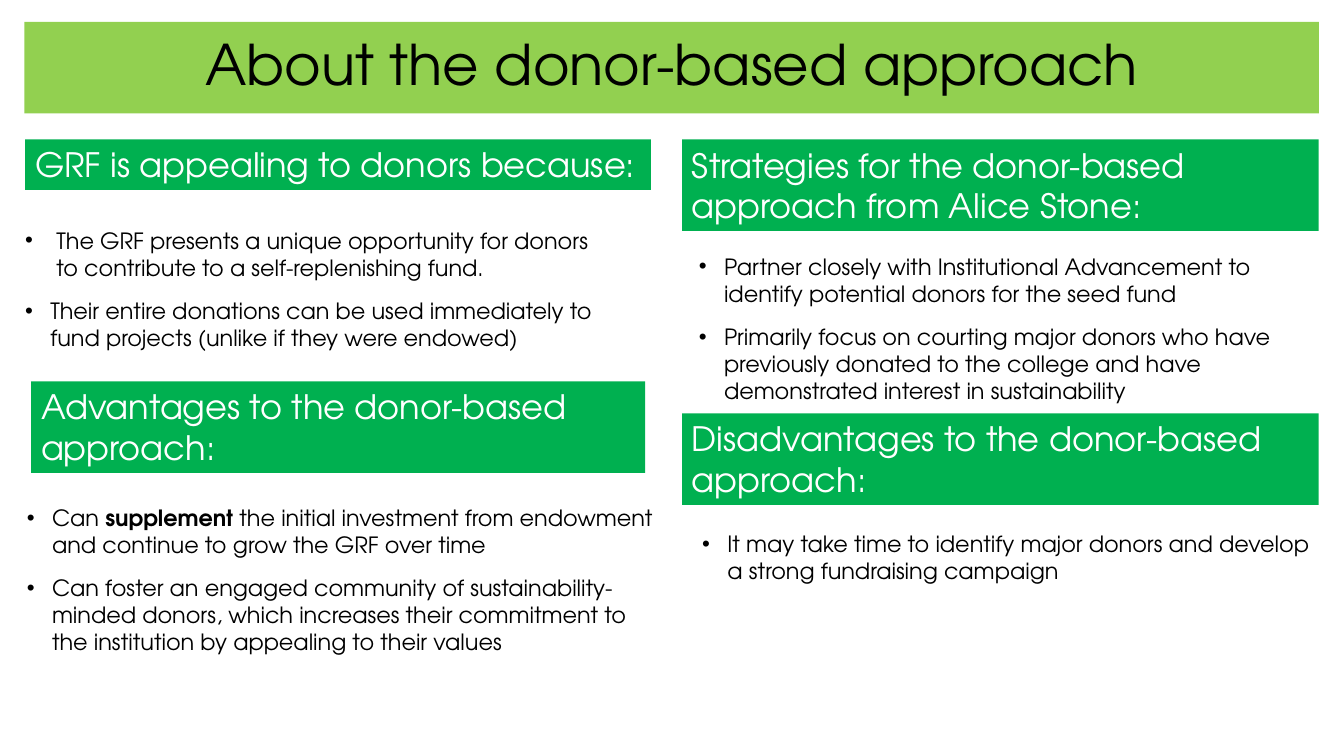
from dataclasses import dataclass

from lxml.etree import SubElement
from pptx import Presentation
from pptx.dml.color import RGBColor
from pptx.enum.shapes import MSO_SHAPE
from pptx.enum.text import MSO_ANCHOR, PP_ALIGN
from pptx.oxml.ns import qn
from pptx.util import Inches, Pt

WIDTH, HEIGHT = Inches(13.33), Inches(7.5)
COLUMNS, ROWS = 160, 90


@dataclass(frozen=True)
class Theme:
    """Colours, font and type sizes of the slide."""
    font: str = "TeX Gyre Adventor"
    title_fill: str = "92D050"
    heading_fill: str = "00B050"
    dark: str = "000000"
    light: str = "FFFFFF"
    title_size: int = 40
    heading_size: int = 24
    body_size: int = 16
    bullet_gap: int = 12


THEME = Theme()
HANG = 0.25
WIDE_HANG = 0.31

HEADINGS = [
    ("GRF is appealing to donors because:", (3, 16.6, 74.5, 6)),
    ("Strategies for the donor-based approach from Alice Stone:", (81.2, 16.6, 75.8, 10.9)),
    ("Advantages to the donor-based approach:", (3.7, 45.4, 73.1, 10.9)),
    ("Disadvantages to the donor-based approach:", (81.2, 49.2, 75.8, 10.9)),
]

POINTS = [
    ((3, 27, 70.1, 16), [
        (WIDE_HANG, ["The GRF presents a unique opportunity for donors to contribute to "
                     "a self-replenishing fund."]),
        (HANG, ["Their entire donations can be used immediately to fund projects "
                "(unlike if they were endowed)"]),
    ]),
    ((83.2, 30.1, 75.6, 19), [
        (HANG, ["Partner closely with Institutional Advancement to identify potential "
                "donors for the seed fund"]),
        (HANG, ["Primarily focus on courting major donors who have previously donated "
                "to the college and have demonstrated interest in sustainability"]),
    ]),
    ((3.2, 60, 75.6, 19), [
        (HANG, ["Can ", "supplement ", "the initial investment from endowment and "
                "continue to grow the GRF over time"]),
        (HANG, ["Can foster an engaged community of sustainability-minded donors, which "
                "increases their commitment to the institution by appealing to their values"]),
    ]),
    ((83.6, 63.1, 73.6, 8), [
        (HANG, ["It may take time to identify major donors and develop a strong "
                "fundraising campaign"]),
    ]),
]


def place(cell):
    """Turn left, top, width and height in grid units into lengths."""
    left, top, width, height = cell
    return (int(WIDTH * left / COLUMNS), int(HEIGHT * top / ROWS),
            int(WIDTH * width / COLUMNS), int(HEIGHT * height / ROWS))


def style(paragraph, size, color):
    """Set the theme font, a size and a colour on a paragraph."""
    paragraph.font.name = THEME.font
    paragraph.font.size = Pt(size)
    paragraph.font.color.rgb = RGBColor.from_string(color)


def add_banner(slide, wording, cell, fill, size, color, align=PP_ALIGN.LEFT, anchor=MSO_ANCHOR.TOP):
    """Add a filled bar with one paragraph and return that paragraph."""
    banner = slide.shapes.add_shape(MSO_SHAPE.RECTANGLE, *place(cell))
    banner.shadow.inherit = False
    banner.fill.solid()
    banner.fill.fore_color.rgb = RGBColor.from_string(fill)
    banner.line.fill.background()
    banner.text_frame.word_wrap = True
    banner.text_frame.vertical_anchor = anchor
    paragraph = banner.text_frame.paragraphs[0]
    paragraph.text = wording
    paragraph.alignment = align
    style(paragraph, size, color)
    return paragraph


def add_bullet(paragraph, hang):
    """Give a paragraph a hanging bullet."""
    properties = paragraph._p.get_or_add_pPr()
    properties.set("marL", str(Inches(hang)))
    properties.set("indent", str(-Inches(hang)))
    SubElement(properties, qn("a:buFont")).set("typeface", "Arial")
    SubElement(properties, qn("a:buChar")).set("char", "•")


def add_points(slide, cell, points):
    """Add a bulleted list in which every second run is bold."""
    frame = slide.shapes.add_textbox(*place(cell)).text_frame
    frame.word_wrap = True
    frame.margin_left = frame.margin_right = frame.margin_top = frame.margin_bottom = 0
    for number, (hang, phrases) in enumerate(points):
        paragraph = frame.add_paragraph() if number else frame.paragraphs[0]
        paragraph.space_before = Pt(THEME.bullet_gap if number else 0)
        add_bullet(paragraph, hang)
        style(paragraph, THEME.body_size, THEME.dark)
        for position, phrase in enumerate(phrases):
            run = paragraph.add_run()
            run.text = phrase
            if position % 2:
                run.font.bold = True


def main():
    """Build and save the slide."""
    deck = Presentation()
    deck.slide_width, deck.slide_height = WIDTH, HEIGHT
    slide = deck.slides.add_slide(deck.slide_layouts[6])
    title = add_banner(slide, "About the donor-based approach", (2.9, 2.6, 154.1, 10.9),
                       THEME.title_fill, THEME.title_size, THEME.dark,
                       PP_ALIGN.CENTER, MSO_ANCHOR.MIDDLE)
    title.line_spacing = 0.9
    for wording, cell in HEADINGS:
        add_banner(slide, wording, cell, THEME.heading_fill, THEME.heading_size, THEME.light)
    for cell, points in POINTS:
        add_points(slide, cell, points)
    deck.save("out.pptx")


if __name__ == "__main__":
    main()
